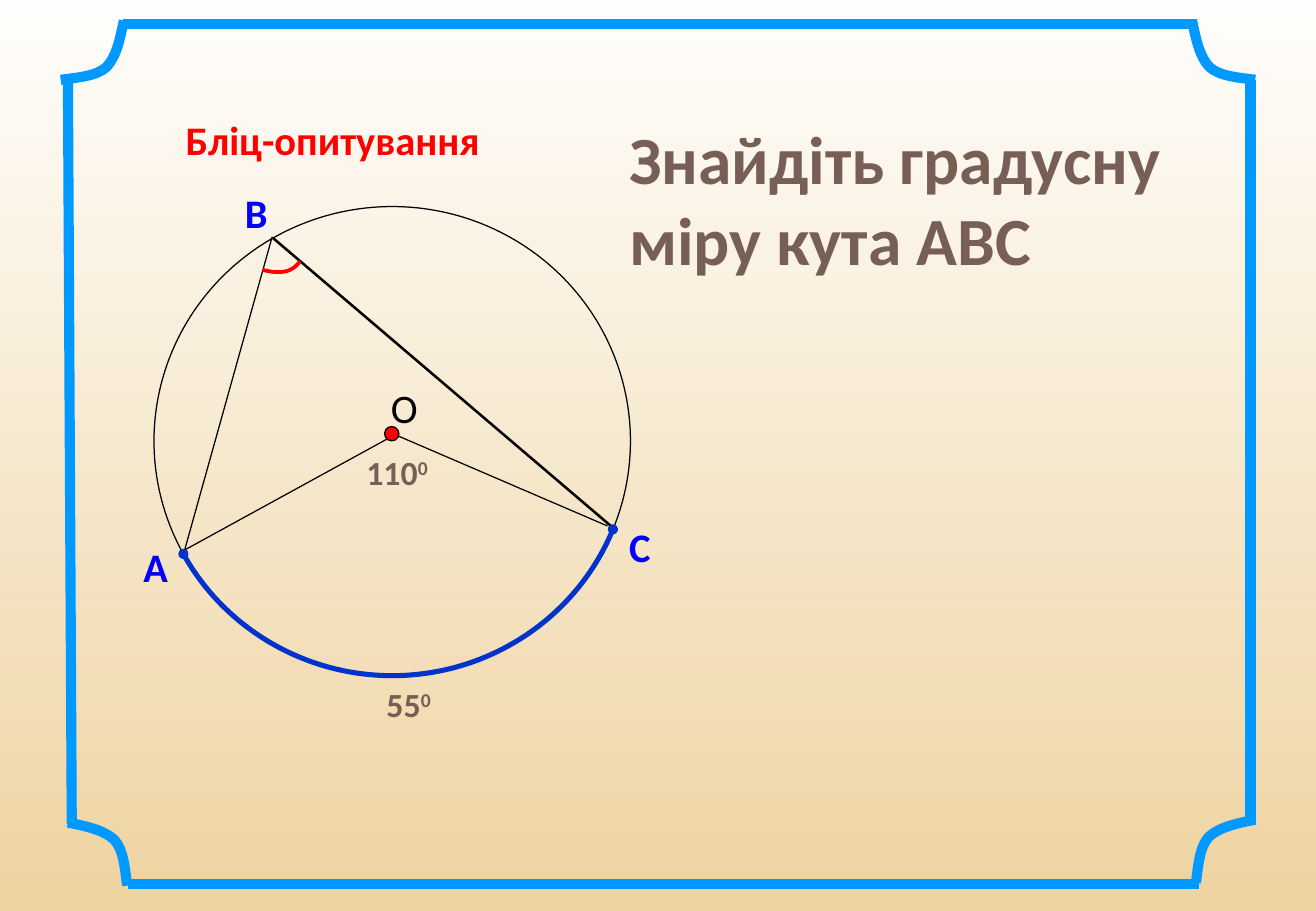
from lxml import etree
from pptx import Presentation
from pptx.dml.color import RGBColor
from pptx.enum.shapes import MSO_CONNECTOR as LINE, MSO_SHAPE as SHAPE
from pptx.enum.text import MSO_ANCHOR as ANCHOR, MSO_AUTO_SIZE as AUTOSIZE, PP_ALIGN as ALIGN
from pptx.oxml.ns import qn
from pptx.util import Cm, Pt

FRAME_BLUE = RGBColor(0x00, 0x99, 0xFF)
ARC_BLUE = RGBColor(0x00, 0x33, 0xCC)
LABEL_BLUE = RGBColor(0x00, 0x00, 0xFF)
RED = RGBColor(0xFF, 0x00, 0x00)
BLACK = RGBColor(0x00, 0x00, 0x00)
BROWN = RGBColor(0x77, 0x5F, 0x55)
CREAM = RGBColor(0xFF, 0xFE, 0xFC)
SAND = RGBColor(0xEE, 0xD3, 0xA1)

deck = Presentation()
deck.slide_width, deck.slide_height = Cm(27.51), Cm(19.05)
page = deck.slides.add_slide(deck.slide_layouts[5])
shapes = page.shapes


def add_line(start, end, color, width):
    line = shapes.add_connector(LINE.STRAIGHT, *map(Cm, start + end))
    line.line.color.rgb = color
    line.line.width = Pt(width)
    etree.SubElement(line._element.spPr, qn("a:effectLst"))


def add_outline(points, color, width, curved=True):
    """Draw an open outline; points are in hundredths of a cm."""
    builder = shapes.build_freeform(*points[0], scale=Cm(0.01))
    builder.add_line_segments(points[1:], close=False)
    outline = builder.convert_to_shape()
    outline.shadow.inherit = False
    outline.fill.background()
    outline.line.color.rgb = color
    outline.line.width = Pt(width)
    if curved:
        # Join every three segments into one cubic Bezier
        segments = list(outline._element.iter(qn("a:lnTo")))
        for first in range(0, len(segments), 3):
            curve, *others = segments[first:first + 3]
            curve.tag = qn("a:cubicBezTo")
            for segment in others:
                curve.append(segment[0])
                segment.getparent().remove(segment)


# Background
background = page.background.fill
background.gradient()
background.gradient_angle = 270
for stop, color in zip(background.gradient_stops, (CREAM, SAND)):
    stop.color.rgb = color

# Frame: four sides, and one corner curve mirrored or turned four ways
for start, end in [((2.57, 0.51), (25.02, 0.51)), ((2.67, 18.49), (25.07, 18.49)),
                   ((26.14, 1.68), (26.14, 17.22)), ((1.42, 1.68), (1.5, 17.22))]:
    add_line(start, end, FRAME_BLUE, 6)
CORNER = [(0, 0), (38, 8), (74, 15), (97, 36), (117, 58), (119, 97), (124, 132)]
TURNED = [(y, x) for x, y in CORNER]
for curve, left, top, side in [(CORNER, 142, 1720, 1), (CORNER, 2624, 1714, -1),
                               (TURNED, 2492, 43, 1), (TURNED, 259, 43, -1)]:
    add_outline([(left + side * x, top + y) for x, y in curve], FRAME_BLUE, 6)

# Chords of the inscribed angle, radii of the central angle, angle mark at B
add_line((5.71, 4.98), (12.83, 11.05), BLACK, 1.5)
add_line((5.69, 4.95), (3.81, 11.68), BLACK, 0.75)
add_outline([(381, 1153), (826, 909), (1270, 1100)], BLACK, 0.75, curved=False)
add_outline([(549, 564), (554, 566), (569, 569), (577, 569), (587, 569),
             (599, 569), (607, 564), (615, 561), (625, 551), (627, 546)], RED, 2.25)

# Circle, arc AC and center point
circle_box = (3.22, 4.32, 9.96, 9.81)
for kind, place, fill, color, width in [
        (SHAPE.OVAL, circle_box, None, BLACK, 0.75),
        (SHAPE.ARC, circle_box, None, ARC_BLUE, 3),
        (SHAPE.OVAL, (8.04, 8.92, 0.3, 0.3), RED, BLACK, 0.75)]:
    figure = shapes.add_shape(kind, *map(Cm, place))
    figure.shadow.inherit = False
    if fill is None:
        figure.fill.background()
    else:
        figure.fill.solid()
        figure.fill.fore_color.rgb = fill
    figure.line.color.rgb = color
    figure.line.width = Pt(width)
    if kind == SHAPE.ARC:
        # Adjustments count 100000ths; angles count 60000ths of a degree
        for index, degrees in enumerate((21.8, 151.6)):
            figure.adjustments[index] = degrees * 0.6
        outline = figure.line._get_or_add_ln()
        for tag in ("a:headEnd", "a:tailEnd"):
            etree.SubElement(outline, qn(tag), type="oval", w="sm", len="sm")

# Title and labels: box, place, text, superscript, font values, color
heading = {"size": Pt(24), "bold": True}
degree = {"size": Pt(20), "bold": True}
labels = [
    (shapes.title, (12.9, 2.32, 12.5, 3.68), "Знайдіть градусну міру кута АВС", "",
     {"size": Pt(40), "bold": True}, BROWN),
    (None, (3.63, 2.29, 7.82, 1.27), "Бліц-опитування", "", heading, RED),
    (None, (2.75, 11.22, 1.55, 1.27), "А", "", heading, LABEL_BLUE),
    (None, (12.9, 10.8, 1.4, 1.27), "С", "", heading, LABEL_BLUE),
    (None, (4.87, 3.81, 1.55, 1.27), "В", "", heading, LABEL_BLUE),
    (None, (7.92, 7.89, 1.2, 1.27), "О", "", {"size": Pt(24), "bold": False}, BLACK),
    (None, (7.41, 9.32, 2.11, 1.09), "110", "0", degree, BROWN),
    (None, (7.83, 14.17, 2.11, 1.09), "55", "0", degree, BROWN),
]
for box, place, text, power, values, color in labels:
    box = box or shapes.add_textbox(0, 0, 0, 0)
    box.left, box.top, box.width, box.height = map(Cm, place)
    frame = box.text_frame
    frame.word_wrap = True
    frame.auto_size = AUTOSIZE.NONE
    frame.vertical_anchor = ANCHOR.TOP
    para = frame.paragraphs[0]
    para.alignment = ALIGN.LEFT
    for part in filter(None, (text, power)):
        span = para.add_run()
        span.text = part
        span.font.name = "Calibri"
        span.font.color.rgb = color
        for name, value in values.items():
            setattr(span.font, name, value)
    if power:
        span.font._element.set("baseline", "30000")

deck.save("out.pptx")
